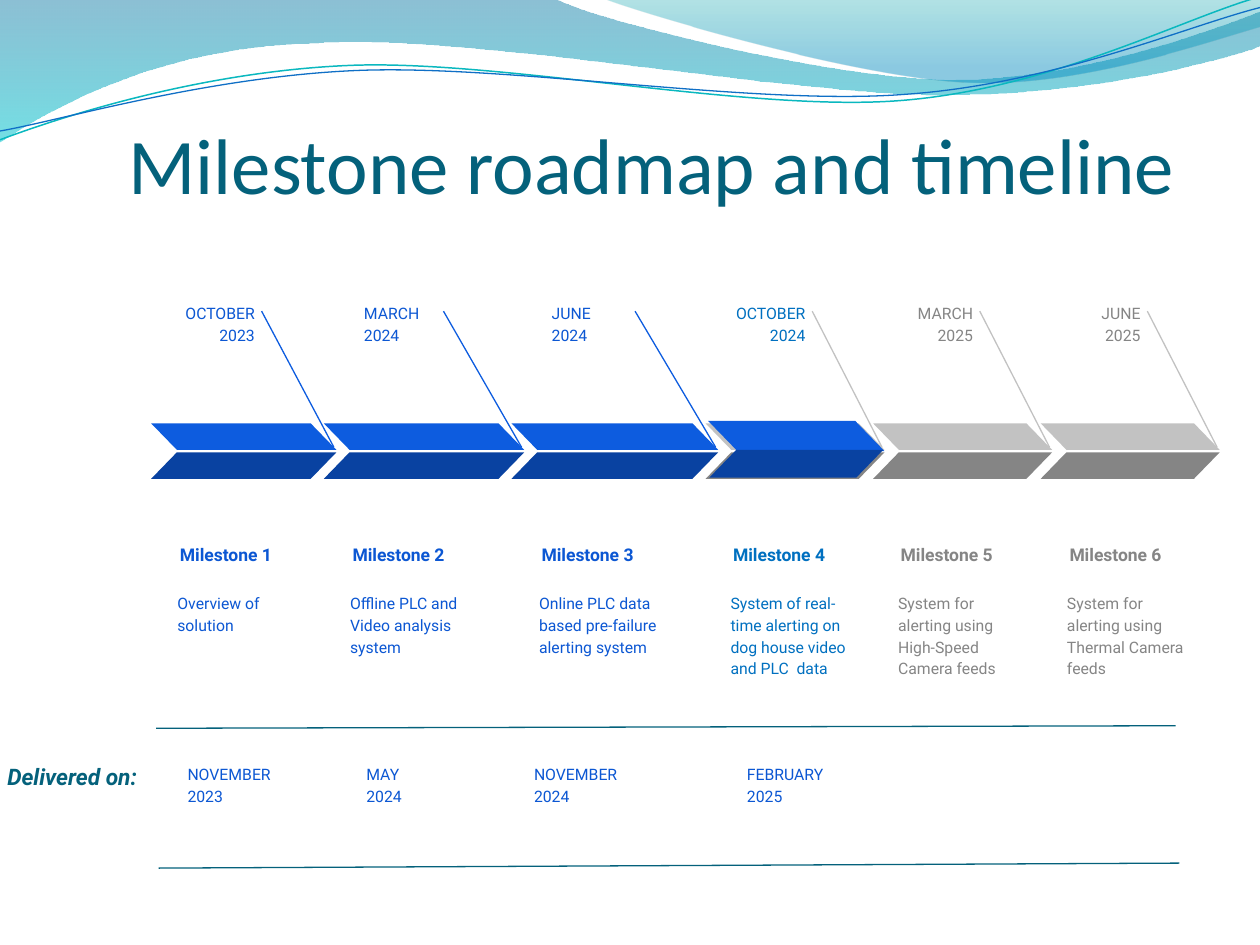
from dataclasses import dataclass

from lxml import etree
from pptx import Presentation
from pptx import util as u
from pptx.dml.color import RGBColor
from pptx.enum import shapes, text
from pptx.oxml.ns import qn

Inches = u.Inches


@dataclass(frozen=True)
class Theme:
    heading_font: str = "Calibri"
    body_font: str = "Roboto"
    title_size: float = 45
    row_size: float = 13
    label_size: float = 10
    body_size: float = 9
    heading: str = "04617B"
    done_text: str = "0C57D3"
    current_text: str = "0070C0"
    done_top: str = "0D5CDF"
    done_bottom: str = "0942A1"
    planned_top: str = "C2C2C2"
    planned_bottom: str = "858585"
    teal_line: str = "0AB8BF"
    blue_line: str = "0F6FC6"


THEME = Theme()
LEFT, RIGHT = text.PP_ALIGN.LEFT, text.PP_ALIGN.RIGHT
DONE = (THEME.done_text, THEME.done_top, THEME.done_bottom)
CURRENT = (THEME.current_text, THEME.planned_top, THEME.planned_bottom)
PLANNED = (THEME.planned_bottom, THEME.planned_top, THEME.planned_bottom)


@dataclass(frozen=True)
class Milestone:
    due: str
    due_left: float
    due_width: float
    due_align: text.PP_ALIGN
    task: str
    task_left: float
    arrow_left: float
    arrow_width: float
    colors: tuple


MILESTONES = [
    Milestone("OCTOBER 2023", 1.2, 0.92, RIGHT, "Overview of solution",
              1.31, 1.2, 1.47, DONE),
    Milestone("MARCH 2024", 2.79, 0.77, LEFT, "Offline PLC and Video analysis system",
              2.68, 2.57, 1.59, DONE),
    Milestone("JUNE 2024", 4.28, 0.81, LEFT,
              "Online PLC data based pre-failure alerting system", 4.18, 4.06, 1.64, DONE),
    Milestone("OCTOBER 2024", 5.6, 0.89, RIGHT,
              "System of real-time alerting on dog house video and PLC  data",
              5.7, 5.6, 1.42, CURRENT),
    Milestone("MARCH 2025", 6.9, 0.92, RIGHT,
              "System for alerting using High-Speed Camera feeds", 7.03, 6.93, 1.42, PLANNED),
    Milestone("JUNE 2025", 8.38, 0.77, RIGHT,
              "System for alerting using Thermal Camera feeds", 8.37, 8.26, 1.42, PLANNED),
]
DELIVERIES = [(1.39, "NOVEMBER 2023"), (2.81, "MAY\n2024"),
              (4.14, "NOVEMBER 2024"), (5.83, "FEBRUARY 2025")]

# Each outline: first point, then points (x, y) or curves (x1, y1, x2, y2, x, y)
BROAD_WAVE = [(0, 0), (4.4, -0.01), (4.76, 0.17, 6.64, 0.63, 7.58, 0.63),
              (8.53, 0.63, 9.58, 0.26, 10, 0.09), (10.01, 0.36),
              (9.83, 0.44, 8.7, 0.76, 7.46, 0.75), (6.22, 0.75, 3.82, 0.28, 2.57, 0.34),
              (1.29, 0.36, 0.46, 0.83, -0.01, 1.13), (0, 0)]
RIGHT_WAVE = [(4.79, -0.01), (5.09, 0.11, 6.82, 0.62, 7.69, 0.65),
              (8.56, 0.69, 9.61, 0.32, 10, 0.21), (10, 0), (4.79, -0.01)]
TEAL_CURVE = [(0, 1.11), (0.48, 0.93, 1.58, 0.57, 2.77, 0.52),
              (3.95, 0.47, 5.93, 0.89, 7.13, 0.8), (8.33, 0.71, 9.38, 0.15, 9.98, -0.02)]
BLUE_CURVE = [(0, 1.04), (0.47, 0.96, 1.64, 0.61, 2.83, 0.56),
              (4.03, 0.51, 5.97, 0.84, 7.17, 0.75), (8.36, 0.67, 9.41, 0.21, 10, 0.06)]


def rgb(color):
    return RGBColor.from_string(color)


def add_outline(slide, outline, close):
    """Build a freeform through the end points, then bend its curved segments."""
    ends = [tuple(map(Inches, segment[-2:])) for segment in outline]
    builder = slide.shapes.build_freeform(*ends[0])
    builder.add_line_segments(ends[1:], close=close)
    shape = builder.convert_to_shape()
    shape.shadow.inherit = False
    straights = list(shape._element.iter(qn("a:lnTo")))
    for straight, segment in zip(straights, outline[1:]):
        if len(segment) == 6:
            straight.tag = qn("a:cubicBezTo")
            for index in (0, 1):
                x, y = segment[2 * index:2 * index + 2]
                control = etree.Element(qn("a:pt"), x=str(Inches(x) - shape.left),
                                        y=str(Inches(y) - shape.top))
                straight.insert(index, control)
    return shape


def add_wave(slide, outline, stops):
    """Fill an outline from top to bottom; stops are (position, colour, opacity in %)."""
    wave = add_outline(slide, outline, close=True)
    wave.line.fill.background()
    wave.fill.gradient()
    wave.fill.gradient_angle = 270
    for stop, (position, color, _) in zip(wave.fill.gradient_stops, stops):
        stop.position = position
        stop.color.rgb = rgb(color)
    for node, (_, _, opacity) in zip(wave._element.spPr.iter(qn("a:srgbClr")), stops):
        etree.SubElement(node, qn("a:alpha")).set("val", str(opacity * 1000))


def add_curve(slide, outline, color, width):
    curve = add_outline(slide, outline, close=False)
    curve.fill.background()
    curve.line.color.rgb = rgb(color)
    curve.line.width = u.Pt(width)


def add_text(slide, box, words, color, size=THEME.body_size, font=THEME.body_font,
             align=LEFT, spacing=1.15, bold=False, italic=False, indent=0,
             anchor=text.MSO_ANCHOR.TOP):
    frame = slide.shapes.add_textbox(*map(Inches, box)).text_frame
    frame.word_wrap = True
    frame.vertical_anchor = anchor
    frame.margin_left = Inches(0.1 + indent)
    frame.margin_right = frame.margin_top = frame.margin_bottom = Inches(0.1)
    paragraph = frame.paragraphs[0]
    paragraph.text = words
    paragraph.alignment = align
    paragraph.line_spacing = spacing
    for run in paragraph.runs:
        run.font.name, run.font.size = font, u.Pt(size)
        run.font.bold, run.font.italic = bold, italic
        run.font.color.rgb = rgb(color)


def add_line(slide, start, end, color):
    line = slide.shapes.add_connector(shapes.MSO_CONNECTOR.STRAIGHT,
                                      *map(Inches, (*start, *end)))
    line.line.color.rgb = rgb(color)
    line.line.width = u.Pt(0.75)
    etree.SubElement(line._element.spPr, qn("a:effectLst"))


def add_arrow_half(slide, box, color, upper):
    half = slide.shapes.add_shape(shapes.MSO_SHAPE.PARALLELOGRAM, *map(Inches, box))
    half.adjustments[0] = 0.97
    half.shadow.inherit = False
    half.fill.solid()
    half.fill.fore_color.rgb = rgb(color)
    half.line.fill.background()
    if upper:
        half._element.spPr.xfrm.set("flipH", "1")


def add_milestone(slide, number, item):
    text_color, top_color, bottom_color = item.colors
    left, width = item.arrow_left, item.arrow_width
    tip = left + width - 0.02
    add_text(slide, (item.due_left, 2.29, item.due_width, 0.35), item.due, text_color,
             align=item.due_align)
    add_text(slide, (item.task_left + 0.02, 3.93, width * 0.83, 0.65),
             f"Milestone {number}", text_color, THEME.label_size, bold=True,
             anchor=text.MSO_ANCHOR.BOTTOM)
    add_text(slide, (item.task_left, 4.59, width * 0.84, 1.08), item.task, text_color)
    add_line(slide, (tip - width * 0.39, 2.47), (tip, 3.55), top_color)
    add_arrow_half(slide, (left, 3.36, width, 0.21), top_color, upper=True)
    add_arrow_half(slide, (left, 3.59, width, 0.21), bottom_color, upper=False)


def main():
    deck = Presentation()
    deck.slide_width, deck.slide_height = Inches(10), Inches(7.5)
    slide = deck.slides.add_slide(deck.slide_layouts[6])

    add_wave(slide, BROAD_WAVE, [(0, "0074A1", 45), (1, "00C6CF", 55)])
    add_wave(slide, RIGHT_WAVE, [(0, "00A1A9", 30), (0.8, "008BBF", 45)])
    add_curve(slide, TEAL_CURVE, THEME.teal_line, 0.85)
    add_curve(slide, BLUE_CURVE, THEME.blue_line, 0.75)
    add_text(slide, (0.49, 0.82, 9.32, 0.89), "Milestone roadmap and timeline",
             THEME.heading, THEME.title_size, THEME.heading_font, spacing=1, indent=0.43)

    for number, item in enumerate(MILESTONES, 1):
        add_milestone(slide, number, item)
    add_arrow_half(slide, (5.62, 3.34, 1.4, 0.24), THEME.done_top, upper=True)
    add_arrow_half(slide, (5.63, 3.57, 1.38, 0.22), THEME.done_bottom, upper=False)

    add_text(slide, (-0.04, 5.95, 1.47, 0.7), "Delivered on:", THEME.heading,
             THEME.row_size, spacing=1, bold=True, italic=True)
    for left, date in DELIVERIES:
        add_text(slide, (left, 5.95, 1.1, 0.35), date, THEME.done_text)
    add_line(slide, (1.24, 5.78), (9.33, 5.76), THEME.heading)
    add_line(slide, (1.26, 6.89), (9.36, 6.85), THEME.heading)

    deck.save("out.pptx")


if __name__ == "__main__":
    main()
